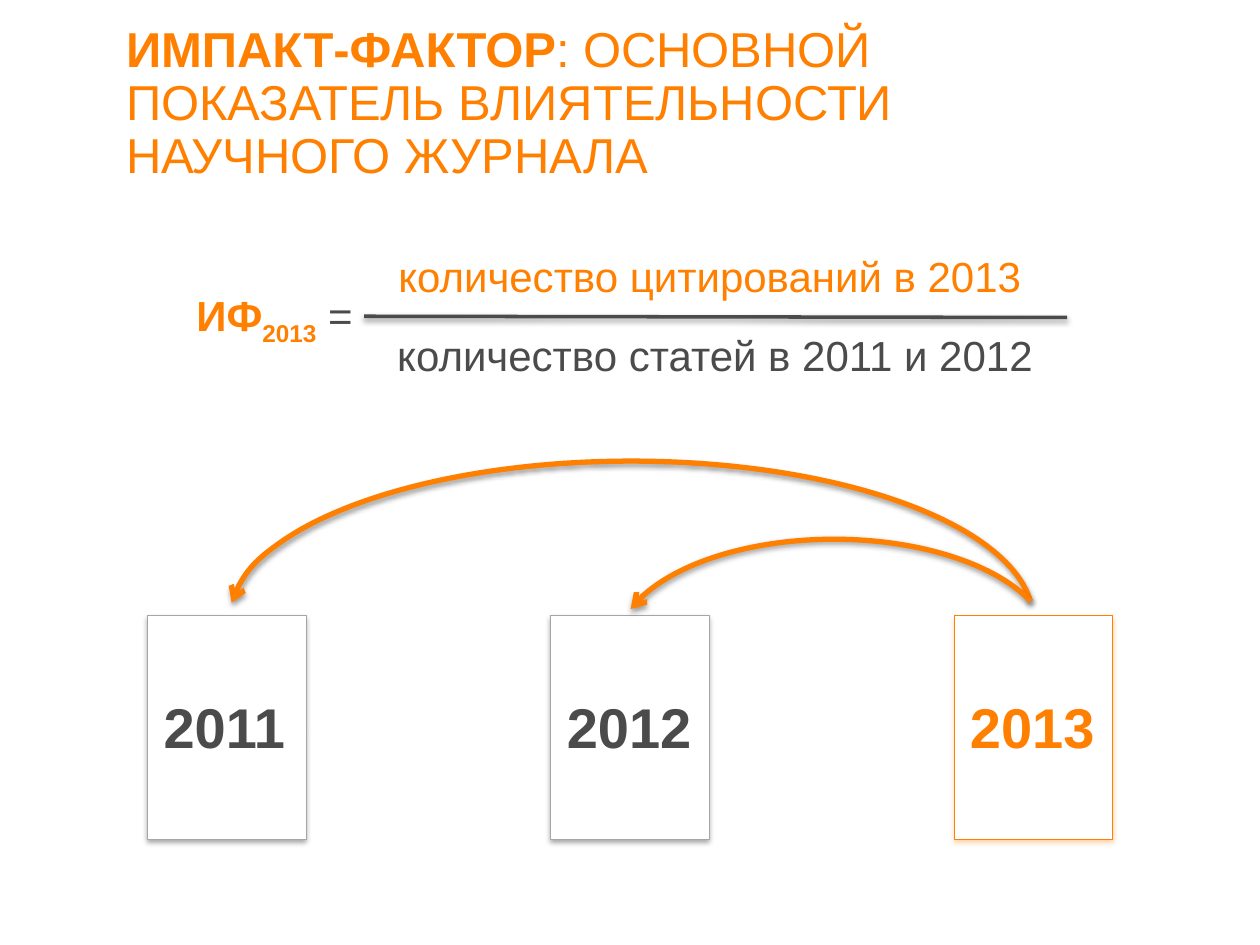
from lxml.etree import SubElement
from pptx import Presentation
from pptx.dml.color import RGBColor
from pptx.enum.shapes import MSO_CONNECTOR, MSO_SHAPE
from pptx.enum.text import MSO_ANCHOR, PP_ALIGN
from pptx.oxml.ns import qn
from pptx.util import Inches, Pt

ORANGE = RGBColor(0xFF, 0x80, 0x00)
DARK = RGBColor(0x4B, 0x4B, 0x4B)
GREY = RGBColor(0xA6, 0xA6, 0xA6)
WHITE = RGBColor(0xFF, 0xFF, 0xFF)
BLACK = RGBColor(0x00, 0x00, 0x00)

# Content: runs are (text, colour, bold, baseline shift in percent)
TITLE = [("ИМПАКТ-ФАКТОР", ORANGE, True, 0),
         (": ОСНОВНОЙ ПОКАЗАТЕЛЬ ВЛИЯТЕЛЬНОСТИ НАУЧНОГО ЖУРНАЛА", ORANGE, False, 0)]
FORMULA = [  # place, alignment, runs
    ((1.46, 2.25, 1.52, 0.5), PP_ALIGN.LEFT,
     [("ИФ", ORANGE, True, 0), ("2013", ORANGE, True, -25), (" =", DARK, False, 0)]),
    ((3.05, 1.94, 5.26, 0.5), PP_ALIGN.CENTER,
     [("количество цитирований в 2013 ", ORANGE, False, 0)]),
    ((3.04, 2.57, 5.27, 0.5), PP_ALIGN.CENTER,
     [("количество статей в 2011 и 2012", DARK, False, 0)]),
]
YEARS = [  # year, text colour, border, shadow, label width
    ("2011", DARK, GREY, BLACK, 1.17),
    ("2012", DARK, GREY, BLACK, 1.2),
    ("2013", ORANGE, ORANGE, ORANGE, 1.2),
]
ARCS = [  # place, start and end angles in degrees
    ((1.82, 3.66, 6.38, 2.52), (182.45, 357.3)),
    ((4.89, 4.28, 3.46, 1.73), (190.9, 346.55)),
]
YEAR_LEFT, YEAR_TOP, YEAR_STEP = 1.17, 4.88, 3.2
YEAR_WIDTH, YEAR_HEIGHT = 1.26, 1.78


def add_shadow(shape, colour=BLACK, alpha=38, distance=1.6):
    """Soft shadow straight below; call after the line is set."""
    effects = SubElement(shape._element.spPr, qn("a:effectLst"))
    shadow = SubElement(effects, qn("a:outerShdw"), blurRad=str(Pt(3.1)),
                        dist=str(Pt(distance)), dir="5400000", rotWithShape="0")
    tint = SubElement(shadow, qn("a:srgbClr"), val=str(colour))
    SubElement(tint, qn("a:alpha"), val=str(alpha * 1000))


def set_line(shape, colour, width):
    shape.line.color.rgb = colour
    shape.line.width = Pt(width)


def add_text(shapes, place, runs, size, align=PP_ALIGN.LEFT):
    box = shapes.add_textbox(*map(Inches, place))
    box.text_frame.word_wrap = False
    para = box.text_frame.paragraphs[0]
    para.alignment = align
    para.font.name, para.font.size = "Arial", Pt(size)
    for text, colour, bold, shift in runs:
        span = para.add_run()
        span.text = text
        span.font.name, span.font.size = "Arial", Pt(size)
        span.font.bold = bold
        span.font.color.rgb = colour
        if shift:
            span.font._element.set("baseline", str(shift * 1000))
    return box


deck = Presentation()
deck.slide_width, deck.slide_height = Inches(10), Inches(7.5)
page = deck.slides.add_slide(deck.slide_layouts[6])

# Title, growing upwards from its bottom edge
frame = add_text(page.shapes, (1, 0.55, 8.01, 0.91), TITLE, 28).text_frame
frame.word_wrap = True
frame.vertical_anchor = MSO_ANCHOR.BOTTOM
frame.margin_left = frame.margin_right = frame.margin_top = frame.margin_bottom = 0
frame.paragraphs[0].line_spacing = 0.9

# Year cards
for index, (year, colour, border, shade, label_width) in enumerate(YEARS):
    left = YEAR_LEFT + index * YEAR_STEP
    group = page.shapes.add_group_shape()
    card = group.shapes.add_shape(MSO_SHAPE.RECTANGLE, *map(
        Inches, (left, YEAR_TOP, YEAR_WIDTH, YEAR_HEIGHT)))
    card.fill.solid()
    card.fill.fore_color.rgb = WHITE
    set_line(card, border, 0.25)
    add_shadow(card, shade, 35, 1.8)
    add_text(group.shapes, (left + 0.03, YEAR_TOP + 0.57, label_width, 0.64),
             [(year, colour, True, 0)], 32)

# Arcs from 2013 back to the earlier years
for place, angles in ARCS:
    arc = page.shapes.add_shape(MSO_SHAPE.ARC, *map(Inches, place))
    for number, angle in enumerate(angles):
        arc.adjustments[number] = angle * 60000 / 100000
    arc.fill.background()
    set_line(arc, ORANGE, 3)
    SubElement(arc.line._get_or_add_ln(), qn("a:headEnd"), type="arrow")
    add_shadow(arc)

# Formula with its fraction bar
for place, align, runs in FORMULA:
    add_text(page.shapes, place, runs, 24, align)
bar = page.shapes.add_connector(
    MSO_CONNECTOR.STRAIGHT, *map(Inches, (2.89, 2.51, 8.47, 2.52)))
set_line(bar, DARK, 2)
add_shadow(bar)

deck.save("out.pptx")
